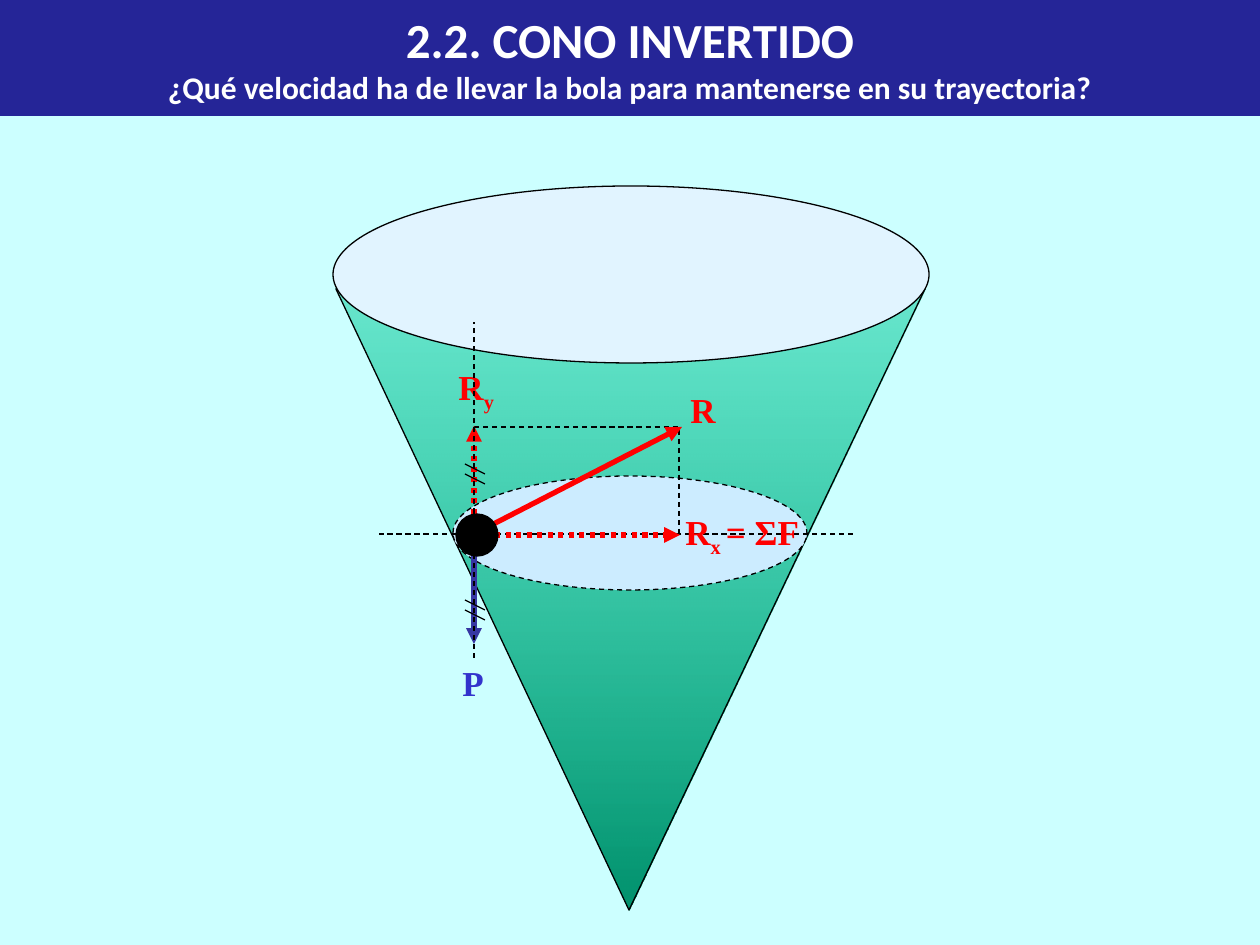
"""Build the inverted cone slide with the forces acting on the ball."""
from lxml import etree
from pptx import Presentation
from pptx.dml.color import RGBColor
from pptx.enum.dml import MSO_LINE
from pptx.enum.shapes import MSO_CONNECTOR, MSO_SHAPE
from pptx.enum.text import MSO_ANCHOR, PP_ALIGN
from pptx.oxml.ns import qn
from pptx.util import Emu, Pt

DASH, DOT = MSO_LINE.DASH, MSO_LINE.ROUND_DOT
OVAL, RECT = MSO_SHAPE.OVAL, MSO_SHAPE.RECTANGLE
STRAIGHT = MSO_CONNECTOR.STRAIGHT
MIDDLE, CENTER = MSO_ANCHOR.MIDDLE, PP_ALIGN.CENTER
PX = 914400 / 126
RED, BLACK = "FF0000", "000000"
rgb = RGBColor.from_string


def px(*values):
    return [Emu(round(v * PX)) for v in values]


def outline(shape, color=BLACK, width=0.75, dash=None):
    shape.line.color.rgb = rgb(color)
    shape.line.width = Pt(width)
    if dash is not None:
        shape.line.dash_style = dash


prs = Presentation()
prs.slide_width, prs.slide_height = px(1260, 945)
s = prs.slides.add_slide(prs.slide_layouts[6])
s.background.fill.solid()
s.background.fill.fore_color.rgb = rgb("CCFFFF")

fb = s.shapes.build_freeform(336, 289, scale=PX)
fb.add_line_segments([(925, 289), (629, 910)], close=True)
cone = fb.convert_to_shape()
cone.shadow.inherit = False
cone.fill.gradient()
cone.fill.gradient_angle = 270
for stop, color in zip(cone.fill.gradient_stops, ("00CC99", "00926D")):
    stop.color.rgb = rgb(color)
top_color = cone._element.spPr.find(".//" + qn("a:srgbClr"))
etree.SubElement(top_color, qn("a:alpha"), val="49000")
outline(cone)

ellipses = [
    ((333, 186, 596, 177), "E1F4FF", None),
    ((453, 476, 354, 114), "CCECFF", DASH),
]
for box, color, dash in ellipses:
    sp = s.shapes.add_shape(OVAL, *px(*box))
    sp.shadow.inherit = False
    sp.fill.solid()
    sp.fill.fore_color.rgb = rgb(color)
    outline(sp, dash=dash)

fb = s.shapes.build_freeform(474, 427, scale=PX)
fb.add_line_segments([(679, 427), (679, 535)], close=False)
projection = fb.convert_to_shape()
projection.shadow.inherit = False
projection.fill.background()
outline(projection, dash=DASH)

ticks = [((465, y, 485, y + 10), BLACK, 0.75, None, None)
         for y in (600, 610, 464, 474)]
lines = [
    ((474, 535, 474, 644), "3636A2", 3, None,
     ((450, 655, 84, 55), "3333CC", ["P"])),
    ((478, 532, 682, 427), RED, 3, None,
     ((678, 382, 84, 55), RED, ["R"])),
    ((474, 535, 474, 426), RED, 3, DOT,
     ((446, 359, 84, 55), RED, ["R", "y"])),
    ((474, 658, 474, 322), BLACK, 0.75, DASH, None),
    ((853, 534, 379, 534), BLACK, 0.75, DASH, None),
    *ticks,
    ((474, 535, 680, 535), RED, 3, DOT,
     ((673, 504, 165, 55), RED, ["R", "x ", "= ΣF"])),
]
for ends, color, width, dash, label in lines:
    c = s.shapes.add_connector(STRAIGHT, *px(*ends))
    outline(c, color, width, dash)
    if label:
        etree.SubElement(c.line._get_or_add_ln(), qn("a:tailEnd"), type="triangle")
    etree.SubElement(c._element.spPr, qn("a:effectLst"))
    if not label:
        continue
    box, color, parts = label
    tf = s.shapes.add_textbox(*px(*box)).text_frame
    tf.word_wrap = True
    p = tf.paragraphs[0]
    p.space_before = Pt(2)
    for i, part in enumerate(parts):
        r = p.add_run()
        r.text = part
        r.font.name, r.font.size, r.font.bold = "Times New Roman", Pt(20), True
        r.font.color.rgb = rgb(color)
        if i == 1:
            r._r.get_or_add_rPr().set("baseline", "-25000")

ball = s.shapes.add_shape(OVAL, *px(456, 514, 42, 42))
ball.shadow.inherit = False
ball.fill.solid()
ball.fill.fore_color.rgb = rgb(BLACK)
outline(ball)

banner = s.shapes.add_shape(RECT, *px(0, 0, 1260, 116))
banner.shadow.inherit = False
banner.fill.solid()
banner.fill.fore_color.rgb = rgb("252597")
banner.line.fill.background()
tf = banner.text_frame
tf.word_wrap = False
tf.vertical_anchor = MIDDLE
tf.text = ("2.2. CONO INVERTIDO\n"
           "¿Qué velocidad ha de llevar la bola para mantenerse en su trayectoria?")
for p, size in zip(tf.paragraphs, (28, 18)):
    p.alignment = CENTER
    font = p.runs[0].font
    font.name, font.size, font.bold = "Calibri", Pt(size), True
    font.color.rgb = rgb("FFFFFF")

prs.save("out.pptx")
